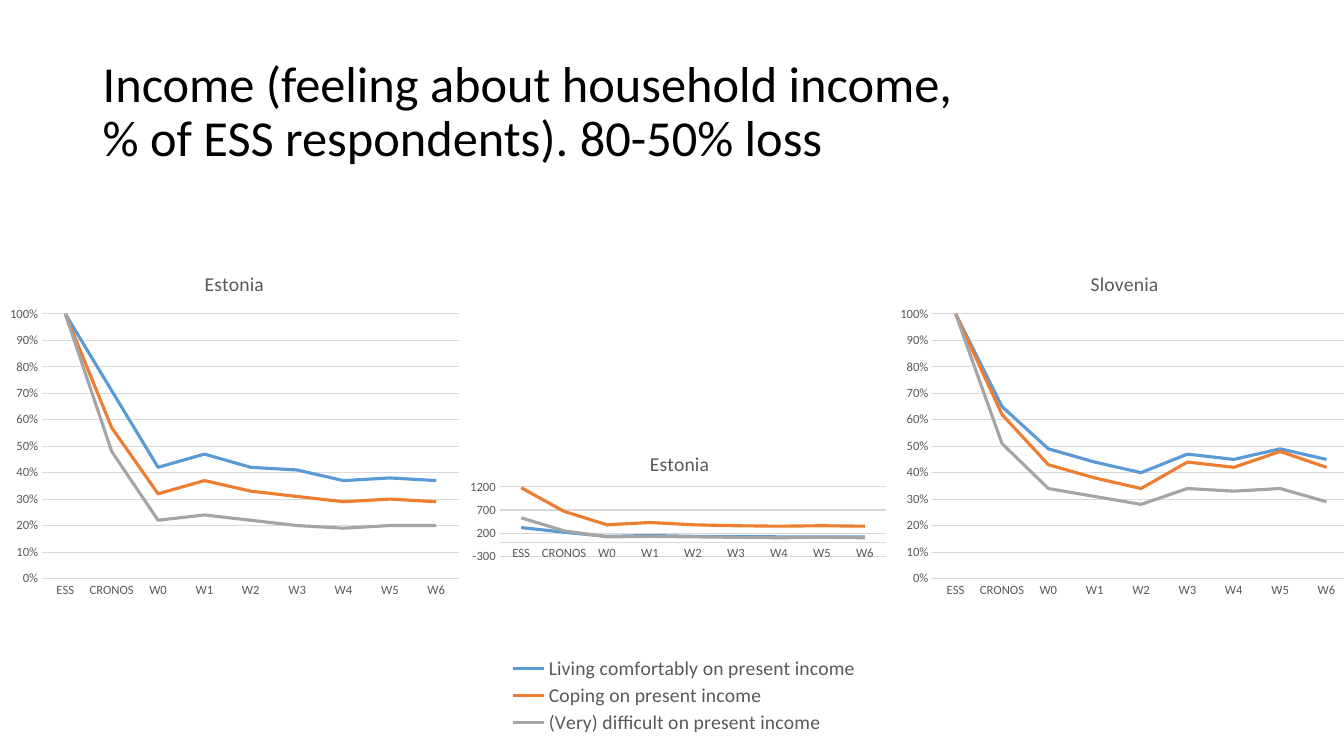
from lxml.etree import SubElement
from pptx import Presentation
from pptx.chart.data import CategoryChartData
from pptx.dml.color import RGBColor
from pptx.enum.chart import XL_CHART_TYPE, XL_LEGEND_POSITION, XL_TICK_MARK
from pptx.enum.text import MSO_ANCHOR
from pptx.oxml.ns import qn
from pptx.util import Inches, Pt

COLORS = {"ink": "000000", "text": "595959", "grid": "D9D9D9",
          "blue": "5B9BD5", "orange": "ED7D31", "gray": "A5A5A5"}
WAVES = ["ESS", "CRONOS"] + [f"W{i}" for i in range(7)]
LEVELS = ["Living comfortably on present income",
          "Coping on present income",
          "(Very) difficult on present income"]


class Deck:
    font = "Calibri"

    def __init__(self, slide):
        self.slide = slide

    def color(self, name):
        return RGBColor.from_string(COLORS[name])

    def style(self, font, size, name="text"):
        font.name, font.size, font.bold = self.font, Pt(size), False
        font.color.rgb = self.color(name)

    def stroke(self, line, name, width):
        line.color.rgb = self.color(name)
        line.width = Pt(width)

    def place(self, part, box, inner=False):
        """Set the manual layout of a chart part, as fractions of the chart."""
        for old in part.findall(qn("c:layout")):
            part.remove(old)
        layout = SubElement(part, qn("c:layout"))
        manual = SubElement(layout, qn("c:manualLayout"))
        rows = [("layoutTarget", "inner")] if inner else []
        rows += [("xMode", "edge"), ("yMode", "edge"), *zip("xywh", box)]
        for tag, val in rows:
            SubElement(manual, qn(f"c:{tag}")).set("val", str(val))
        # The layout follows the legend position, or comes first in the plot
        part.insert(1 if part.tag == qn("c:legend") else 0, layout)

    def title(self, text, box, size):
        shape = self.slide.shapes.add_textbox(*map(Inches, box))
        frame = shape.text_frame
        frame.word_wrap = True
        frame.vertical_anchor = MSO_ANCHOR.MIDDLE
        frame.text = text
        para = frame.paragraphs[0]
        para.line_spacing = 0.9
        for run in para.runs:
            self.style(run.font, size, "ink")

    def chart(self, name, box, rows, plot, low, high, step, form, names):
        data = CategoryChartData()
        data.categories = WAVES
        for level, vals in zip(names, rows):
            data.add_series(level, vals)
        chart = self.slide.shapes.add_chart(
            XL_CHART_TYPE.LINE, *map(Inches, box), data).chart
        self.style(chart.font, 10, "ink")
        chart.has_legend = False
        chart.has_title = True
        frame = chart.chart_title.text_frame
        frame.text = name
        self.style(frame.paragraphs[0].runs[0].font, 14)
        chart.chart_title.include_in_layout = False

        # Axes
        cat, val = chart.category_axis, chart.value_axis
        for axis in (cat, val):
            axis.major_tick_mark = axis.minor_tick_mark = XL_TICK_MARK.NONE
            self.style(axis.tick_labels.font, 9)
        self.stroke(cat.format.line, "grid", 0.75)
        val.format.line.fill.background()
        val.minimum_scale, val.maximum_scale, val.major_unit = low, high, step
        val.has_major_gridlines = True
        self.stroke(val.major_gridlines.format.line, "grid", 0.75)
        val.tick_labels.number_format = form
        val.tick_labels.number_format_is_linked = False

        # Lines
        chart.plots[0].vary_by_categories = False
        for line, hue in zip(chart.series, ("blue", "orange", "gray")):
            line.smooth = False
            self.stroke(line.format.line, hue, 2.25)
        self.place(chart.plots[0]._element.getparent(), plot, True)
        return chart

    def legend(self, chart, box, size):
        chart.has_legend = True
        chart.legend.position = XL_LEGEND_POSITION.BOTTOM
        chart.legend.include_in_layout = False
        self.style(chart.legend.font, size)
        self.place(chart.legend._element, box)


def main():
    prs = Presentation()
    prs.slide_width, prs.slide_height = Inches(13.33), Inches(7.5)
    deck = Deck(prs.slides.add_slide(prs.slide_layouts[6]))

    # Counts, with the legend for all charts
    counts = [[320, 220, 130, 150, 130, 130, 120, 120, 120],
              [1180, 670, 380, 430, 380, 360, 350, 360, 350],
              [530, 250, 120, 130, 120, 110, 100, 110, 100]]
    mid = deck.chart("Estonia", (4.51, 4.32, 4.46, 3), counts,
                     (0.1, 0.17, 0.86, 0.23), -300, 1200, 500, "General", LEVELS)
    deck.legend(mid, (0.11, 0.72, 0.8, 0.28), 14)

    # Title
    deck.title("Income (feeling about household income, \v"
               "% of ESS respondents). 80-50% loss", (0.92, 0.4, 11.5, 1.45), 36)

    # Shares of each country
    shares = {
        "Estonia": (0, [[1, 0.71, 0.42, 0.47, 0.42, 0.41, 0.37, 0.38, 0.37],
                        [1, 0.57, 0.32, 0.37, 0.33, 0.31, 0.29, 0.3, 0.29],
                        [1, 0.48, 0.22, 0.24, 0.22, 0.2, 0.19, 0.2, 0.2]]),
        "Slovenia": (8.83, [[1, 0.65, 0.49, 0.44, 0.4, 0.47, 0.45, 0.49, 0.45],
                            [1, 0.62, 0.43, 0.38, 0.34, 0.44, 0.42, 0.48, 0.42],
                            [1, 0.51, 0.34, 0.31, 0.28, 0.34, 0.33, 0.34, 0.29]]),
    }
    names = [f"Series {i}" for i in (1, 2, 3)]
    for land, (left, rows) in shares.items():
        deck.chart(land, (left, 2.52, 4.65, 3.5), rows,
                   (0.09, 0.17, 0.89, 0.75), 0, 1, 0.1, "0%", names)

    prs.save("out.pptx")


if __name__ == "__main__":
    main()
